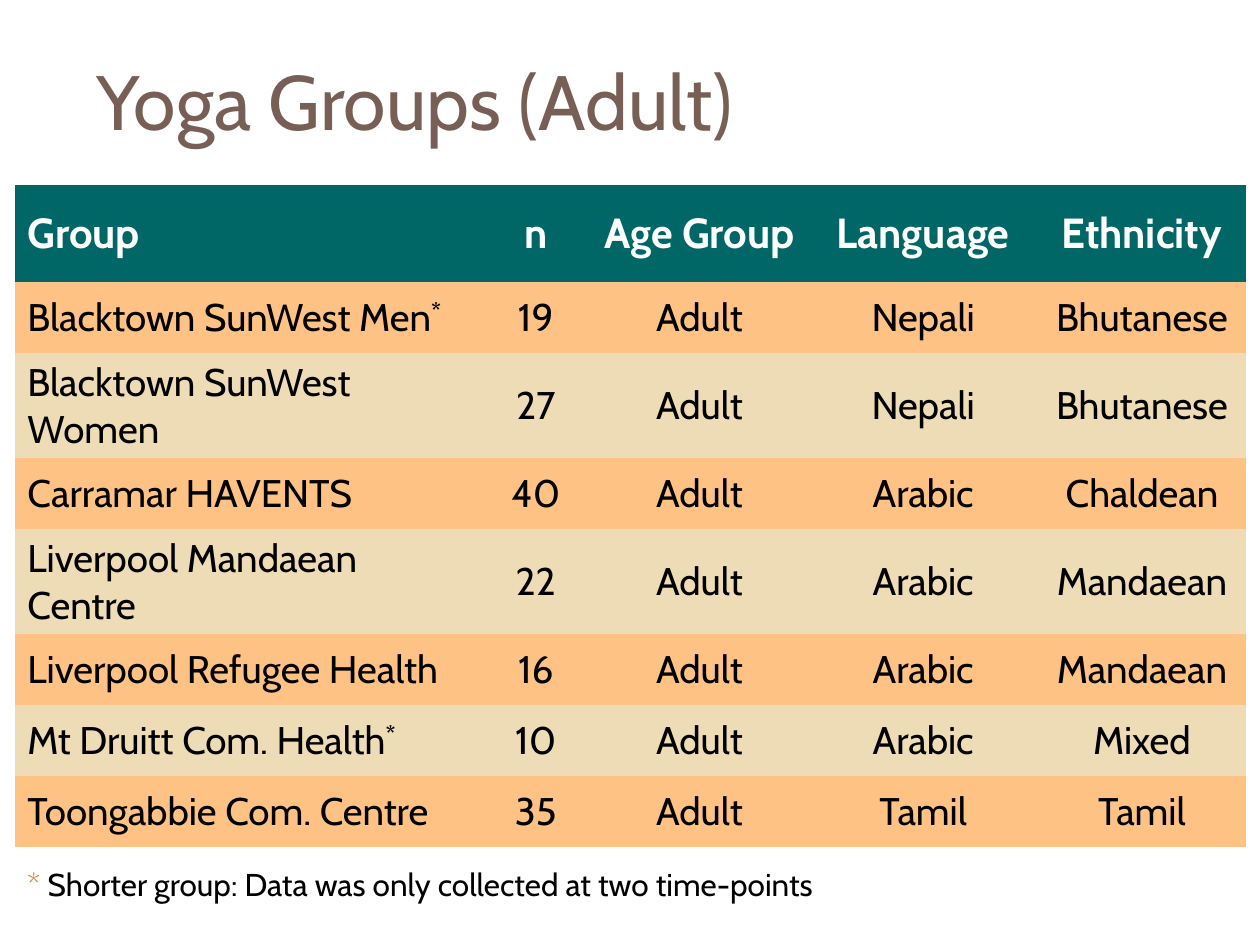
from pptx import Presentation
from pptx.dml.color import RGBColor
from pptx.enum.text import MSO_ANCHOR, PP_ALIGN
from pptx.oxml.ns import qn
from pptx.util import Cm, Pt

# Content: a trailing * in a group name marks a shorter group
TITLE = "Yoga Groups (Adult)"
HEADERS = ("Group", "n", "Age Group", "Language", "Ethnicity")
GROUPS = [
    ("Blacktown SunWest Men*", "19", "Adult", "Nepali", "Bhutanese"),
    ("Blacktown SunWest Women", "27", "Adult", "Nepali", "Bhutanese"),
    ("Carramar HAVENTS", "40", "Adult", "Arabic", "Chaldean"),
    ("Liverpool Mandaean Centre", "22", "Adult", "Arabic", "Mandaean"),
    ("Liverpool Refugee Health", "16", "Adult", "Arabic", "Mandaean"),
    ("Mt Druitt Com. Health*", "10", "Adult", "Arabic", "Mixed"),
    ("Toongabbie Com. Centre", "35", "Adult", "Tamil", "Tamil"),
]
FOOTNOTE = [
    ("* ", "DD8047"),
    ("Shorter group: Data was only collected at two time-points", "000000"),
]

# Look, lengths in centimetres
FONT = "Cabin"
HEADER_FILL = "006666"
BAND_FILLS = ("FFC285", "EDDCB5")
COLUMN_WIDTHS = (9.4, 2.2, 4.4, 4.62, 4.2)
HEADER_HEIGHT, ROW_HEIGHT = 1.96, 1.43
LEFT = 0.3
NO_STYLE_NO_GRID = "{2D5ABB26-0587-4C30-8999-92F81FD0307C}"


def color(hex_code):
    return RGBColor.from_string(hex_code)


def set_font(font, size, hex_code, bold=False):
    font.name, font.size, font.bold = FONT, Pt(size), bold
    font.color.rgb = color(hex_code)


def add_text(page, left, top, width, height, spans, size, anchor):
    box = page.shapes.add_textbox(Cm(left), Cm(top), Cm(width), Cm(height))
    frame = box.text_frame
    frame.word_wrap = True
    frame.vertical_anchor = anchor
    for text, hex_code in spans:
        span = frame.paragraphs[0].add_run()
        span.text = text
        set_font(span.font, size, hex_code)


def fill_cell(cell, text, size, hex_code, fill, bold, align):
    cell.fill.solid()
    cell.fill.fore_color.rgb = color(fill)
    cell.vertical_anchor = MSO_ANCHOR.MIDDLE
    para = cell.text_frame.paragraphs[0]
    para.alignment = align
    set_font(para.font, size, hex_code, bold)
    name, star, _ = text.partition("*")
    para.add_run().text = name
    if star:
        mark = para.add_run()
        mark.text = star
        mark.font.bold = True
        mark._r.get_or_add_rPr().set("baseline", "30000")


def add_group_table(page):
    rows = [HEADERS, *GROUPS]
    heights = [HEADER_HEIGHT] + [ROW_HEIGHT] * len(GROUPS)
    table = page.shapes.add_table(
        len(rows), len(HEADERS), Cm(LEFT), Cm(3.73),
        Cm(sum(COLUMN_WIDTHS)), Cm(sum(heights))).table
    table._tbl.tblPr.find(qn("a:tableStyleId")).text = NO_STYLE_NO_GRID
    for column, width in zip(table.columns, COLUMN_WIDTHS):
        column.width = Cm(width)
    for r, values in enumerate(rows):
        table.rows[r].height = Cm(heights[r])
        if r == 0:
            look = (24, "FFFFFF", HEADER_FILL, True)
        else:
            look = (22, "000000", BAND_FILLS[(r - 1) % 2], False)
        for c, text in enumerate(values):
            align = PP_ALIGN.CENTER if c else PP_ALIGN.LEFT
            fill_cell(table.cell(r, c), text, *look, align)


def main():
    deck = Presentation()
    deck.slide_width, deck.slide_height = Cm(25.4), Cm(19.05)
    page = deck.slides.add_slide(deck.slide_layouts[6])
    # Title, table, footnote
    add_text(page, 1.7, 0.64, 22.66, 2.74, [(TITLE, "775F55")], 44, MSO_ANCHOR.MIDDLE)
    add_group_table(page)
    add_text(page, LEFT, 17.32, 22.6, 1.02, FOOTNOTE, 18, MSO_ANCHOR.TOP)
    deck.save("out.pptx")


if __name__ == "__main__":
    main()
